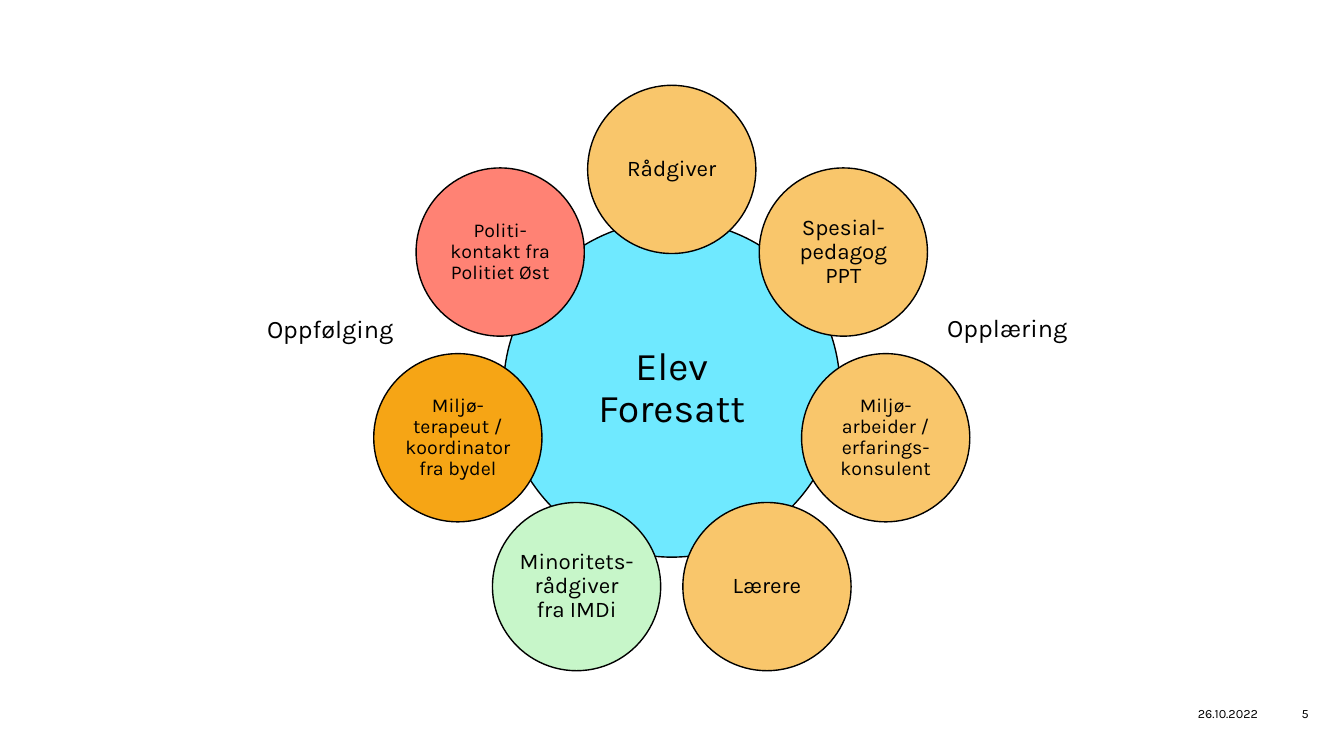
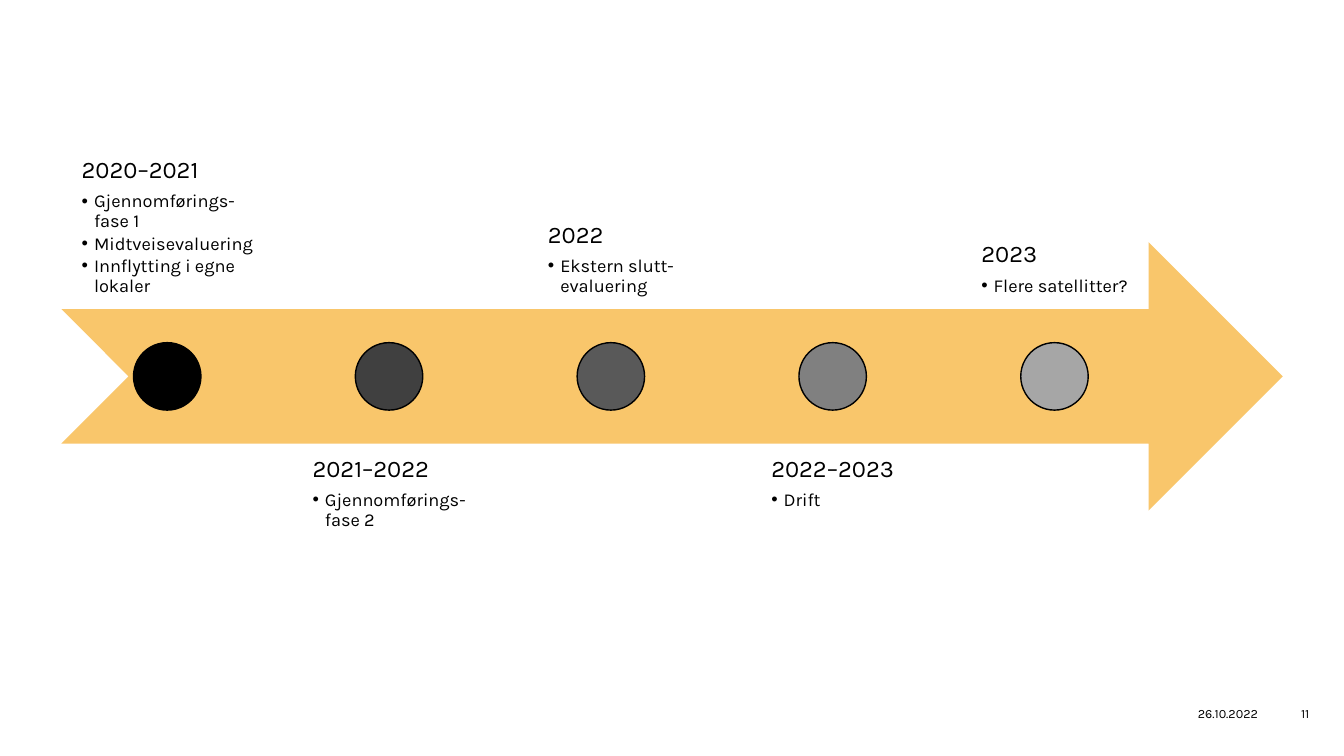
import math
from dataclasses import dataclass

from lxml import etree
from pptx import Presentation
from pptx.dml.color import RGBColor
from pptx.enum import shapes, text
from pptx.oxml import ns
from pptx.util import Cm, Pt


@dataclass(frozen=True)
class Theme:
    font: str = "Karla"
    ink: str = "000000"
    cyan: str = "6FE9FF"
    sand: str = "F9C66B"
    amber: str = "F6A515"
    mint: str = "C7F6C9"
    coral: str = "FF8274"
    footer: float = 9
    hub: float = 28
    label: float = 18
    node: float = 16
    small_node: float = 14
    year: float = 17
    bullet: float = 13


@dataclass(frozen=True)
class Box:
    left: float
    top: float
    width: float
    height: float

    def emu(self) -> tuple:
        return tuple(Cm(v) for v in (self.left, self.top, self.width, self.height))


@dataclass(frozen=True)
class Role:
    name: str
    fill: str
    size: float


@dataclass(frozen=True)
class Milestone:
    years: str
    steps: tuple[str, ...]
    fill: str


T = Theme()
ALIGN = text.PP_ALIGN
ANCHOR = text.MSO_ANCHOR
SHAPE = shapes.MSO_SHAPE

ROLES = (
    Role("Rådgiver", T.sand, T.node),
    Role("Spesial-pedagog PPT", T.sand, T.node),
    Role("Miljø-arbeider / erfarings-konsulent", T.sand, T.small_node),
    Role("Lærere", T.sand, T.node),
    Role("Minoritets-rådgiver fra IMDi", T.mint, T.node),
    Role("Miljø-terapeut / koordinator fra bydel", T.amber, T.small_node),
    Role("Politi-kontakt fra Politiet Øst", T.coral, T.small_node),
)

MILESTONES = (
    Milestone("2020–2021", ("Gjennomførings-fase 1", "Midtveisevaluering",
                            "Innflytting i egne lokaler"), "000000"),
    Milestone("2021–2022", ("Gjennomførings-fase 2",), "404040"),
    Milestone("2022", ("Ekstern slutt-evaluering",), "595959"),
    Milestone("2022–2023", ("Drift",), "808080"),
    Milestone("2023", ("Flere satellitter?",), "A6A6A6"),
)


def apply(obj, fmt: dict) -> None:
    for name, value in fmt.items():
        setattr(obj, name, value)


def set_insets(tf, inset: float) -> None:
    apply(tf, {f"margin_{side}": Cm(inset) for side in ("left", "top", "right", "bottom")})


def write(p, content: str, size: float, **fmt) -> None:
    p.text = content
    apply(p, fmt)
    for r in p.runs:
        apply(r.font, {"name": T.font, "size": Pt(size)})
        r.font.color.rgb = RGBColor.from_string(T.ink)


def add_bullet(p, indent: float) -> None:
    pr = p._p.get_or_add_pPr()
    pr.set("marL", str(Cm(indent)))
    pr.set("indent", str(-Cm(indent)))
    etree.SubElement(pr, ns.qn("a:buFont")).set("typeface", "Arial")
    etree.SubElement(pr, ns.qn("a:buChar")).set("char", "•")


def add_label(s, box: Box, content: str, size: float, align=ALIGN.LEFT, anchor=ANCHOR.TOP) -> None:
    tf = s.shapes.add_textbox(*box.emu()).text_frame
    apply(tf, {"word_wrap": True, "vertical_anchor": anchor})
    write(tf.paragraphs[0], content, size, alignment=align)


def add_figure(s, kind, box: Box, fill: str | None = None, outline: bool = False):
    sp = s.shapes.add_shape(kind, *box.emu())
    sp.shadow.inherit = False
    if fill:
        sp.fill.solid()
        sp.fill.fore_color.rgb = RGBColor.from_string(fill)
    else:
        sp.fill.background()
    if outline:
        sp.line.color.rgb = RGBColor.from_string(T.ink)
        sp.line.width = Pt(1)
    else:
        sp.line.fill.background()
    return sp


def add_circle(s, cx: float, cy: float, size: float, fill: str):
    box = Box(cx - size / 2, cy - size / 2, size, size)
    return add_figure(s, SHAPE.OVAL, box, fill, outline=True)


def add_text_circle(s, cx: float, cy: float, size: float, role: Role, inset: float) -> None:
    tf = add_circle(s, cx, cy, size, role.fill).text_frame
    apply(tf, {"word_wrap": True, "vertical_anchor": ANCHOR.MIDDLE})
    set_insets(tf, inset)
    write(tf.paragraphs[0], role.name, role.size, alignment=ALIGN.CENTER, line_spacing=0.9)


def add_milestone_text(s, box: Box, milestone: Milestone, anchor) -> None:
    tf = add_figure(s, SHAPE.RECTANGLE, box).text_frame
    apply(tf, {"word_wrap": True, "vertical_anchor": anchor})
    set_insets(tf, 0.33)
    tf._txBody.bodyPr.set("anchorCtr", "1")
    fmt = {"alignment": ALIGN.LEFT, "line_spacing": 0.9}
    write(tf.paragraphs[0], milestone.years, T.year, **fmt)
    for i, step in enumerate(milestone.steps):
        p = tf.add_paragraph()
        add_bullet(p, 0.31)
        write(p, step, T.bullet, space_before=Pt(2 if i else 6), **fmt)


def add_slide(prs, number: int):
    s = prs.slides.add_slide(prs.slide_layouts[6])
    add_label(s, Box(28.22, 17.48, 3.73, 1.02), "26.10.2022", T.footer, ALIGN.RIGHT, ANCHOR.MIDDLE)
    add_label(s, Box(31.93, 17.48, 1.93, 1.02), str(number), T.footer, ALIGN.CENTER, ANCHOR.MIDDLE)
    return s


def build_team(prs) -> None:
    s = add_slide(prs, 5)
    cx, cy, radius = 16.93, 9.8, 5.53
    add_text_circle(s, cx, cy, 8.48, Role("Elev\vForesatt", T.cyan, T.hub), 0.1)
    for i, role in enumerate(ROLES):
        angle = math.tau * i / len(ROLES)
        add_text_circle(s, cx + radius * math.sin(angle), cy - radius * math.cos(angle),
                        4.24, role, 0.05)
    add_label(s, Box(23.62, 7.75, 3.76, 1.02), "Opplæring", T.label)
    add_label(s, Box(6.48, 7.77, 5.18, 1.02), "Oppfølging", T.label)


def build_timeline(prs) -> None:
    s = add_slide(prs, 11)
    arrow = Box(1.55, 6.1, 30.78, 6.77)
    add_figure(s, SHAPE.NOTCHED_RIGHT_ARROW, arrow, T.sand)
    width, pitch = 5.33, 5.59
    middle = arrow.top + arrow.height / 2
    above = arrow.top + arrow.height / 4 - arrow.height
    below = arrow.top + arrow.height * 3 / 4
    for i, milestone in enumerate(MILESTONES):
        left = arrow.left + i * pitch
        top, anchor = (below, ANCHOR.TOP) if i % 2 else (above, ANCHOR.BOTTOM)
        add_milestone_text(s, Box(left, top, width, arrow.height), milestone, anchor)
        add_circle(s, left + width / 2, middle, 1.7, milestone.fill)


def main() -> None:
    prs = Presentation()
    apply(prs, {"slide_width": Cm(33.87), "slide_height": Cm(19.05)})
    build_team(prs)
    build_timeline(prs)
    prs.save("out.pptx")


if __name__ == "__main__":
    main()
